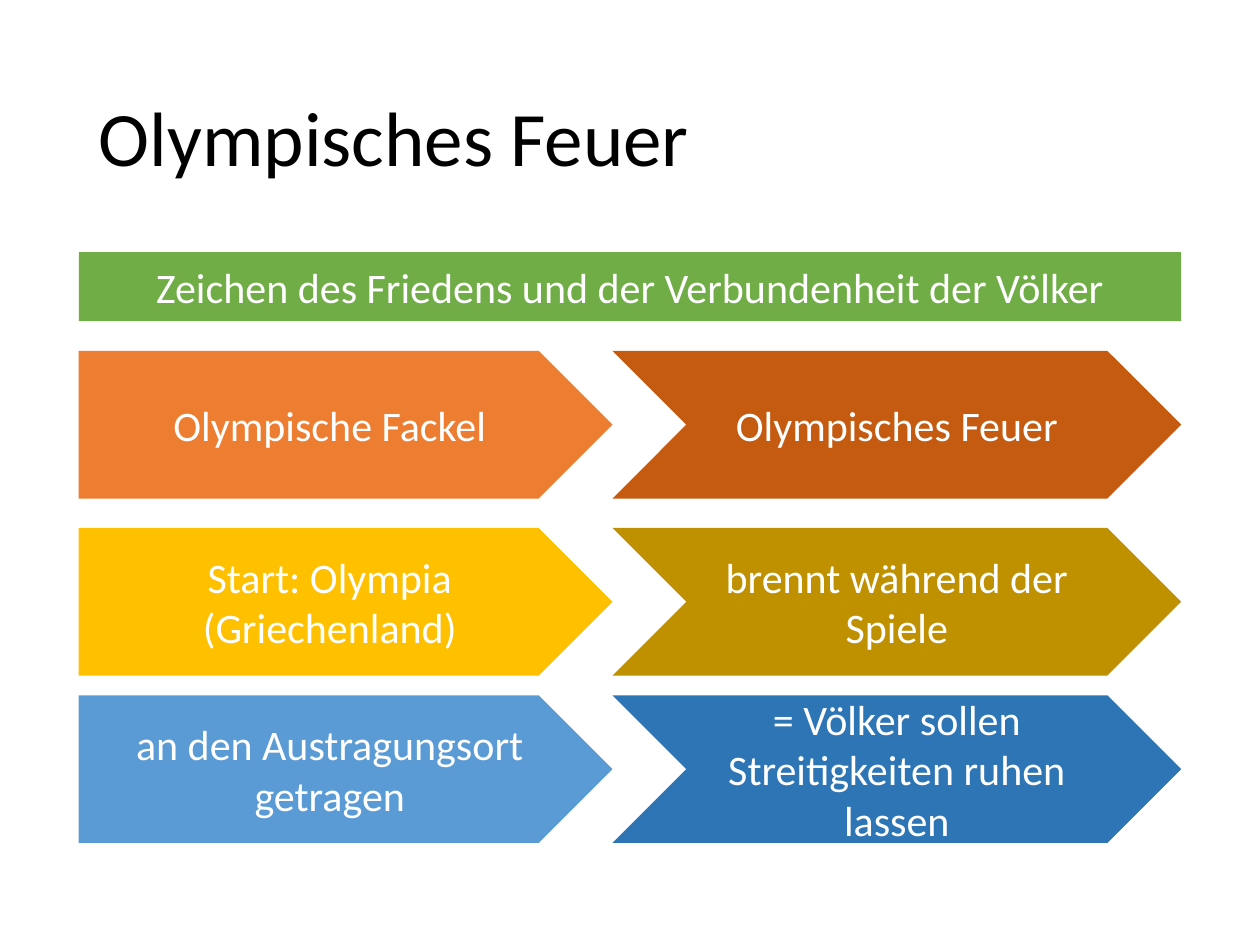
from pptx import Presentation
from pptx import util as u
from pptx.dml.color import RGBColor
from pptx.enum import shapes, text

Pt = u.Pt
SHAPE = shapes.MSO_SHAPE

LEFT, RIGHT, MIDDLE = 45, 675, 350
ROW_HEIGHT = 84.4
ROWS = [
    (200.5, ("Olympische Fackel", "ED7D31"), ("Olympisches Feuer", "C55A11")),
    (301.7, ("Start: Olympia (Griechenland)", "FFC000"),
     ("brennt während der Spiele", "BF9000")),
    (397.3, ("an den Austragungsort getragen", "5B9BD5"),
     ("= Völker sollen Streitigkeiten ruhen lassen", "2E75B6")),
]


def color(value):
    return RGBColor.from_string(value)


class Deck:
    """Holds the text style and the current slide."""

    font = "Calibri"
    frame = {
        "word_wrap": True,
        "auto_size": text.MSO_AUTO_SIZE.NONE,
        "vertical_anchor": text.MSO_ANCHOR.MIDDLE,
    }

    def __init__(self, slide):
        self.s = slide

    def add_text(self, sp, content, size, fill, frame, paragraph):
        tf = sp.text_frame
        p = tf.paragraphs[0]
        r = p.add_run()
        r.text = content
        font = {"name": self.font, "size": Pt(size)}
        for target, values in ((tf, self.frame | frame), (p, paragraph), (r.font, font)):
            for name, value in values.items():
                setattr(target, name, value)
        r.font.color.rgb = color(fill)

    def title(self, content, x, y, w, h):
        sp = self.s.shapes.add_textbox(Pt(x), Pt(y), Pt(w), Pt(h))
        self.add_text(sp, content, 44, "000000", {}, {"line_spacing": 0.9})

    def block(self, kind, content, fill, x, y, w, h, **frame):
        sp = self.s.shapes.add_shape(kind, Pt(x), Pt(y), Pt(w), Pt(h))
        sp.shadow.inherit = False
        sp.fill.solid()
        sp.fill.fore_color.rgb = color(fill)
        sp.line.fill.background()
        self.add_text(sp, content, 24, "FFFFFF", frame,
                      {"alignment": text.PP_ALIGN.CENTER})


def main():
    prs = Presentation()
    prs.slide_width, prs.slide_height = Pt(720), Pt(540)
    deck = Deck(prs.slides.add_slide(prs.slide_layouts[6]))

    deck.title("Olympisches Feuer", 49.5, 28.75, 621, 104.4)
    for y, (start, start_fill), (goal, goal_fill) in ROWS:
        deck.block(SHAPE.PENTAGON, start, start_fill, LEFT, y, MIDDLE - LEFT, ROW_HEIGHT,
                   margin_left=Pt(3), margin_right=0)
        deck.block(SHAPE.CHEVRON, goal, goal_fill, MIDDLE, y, RIGHT - MIDDLE, ROW_HEIGHT,
                   margin_left=0, margin_right=0)
    deck.block(SHAPE.RECTANGLE, "Zeichen des Friedens und der Verbundenheit der Völker",
               "70AD47", LEFT, 144, RIGHT - LEFT, 39.5)
    prs.save("out.pptx")


if __name__ == "__main__":
    main()
